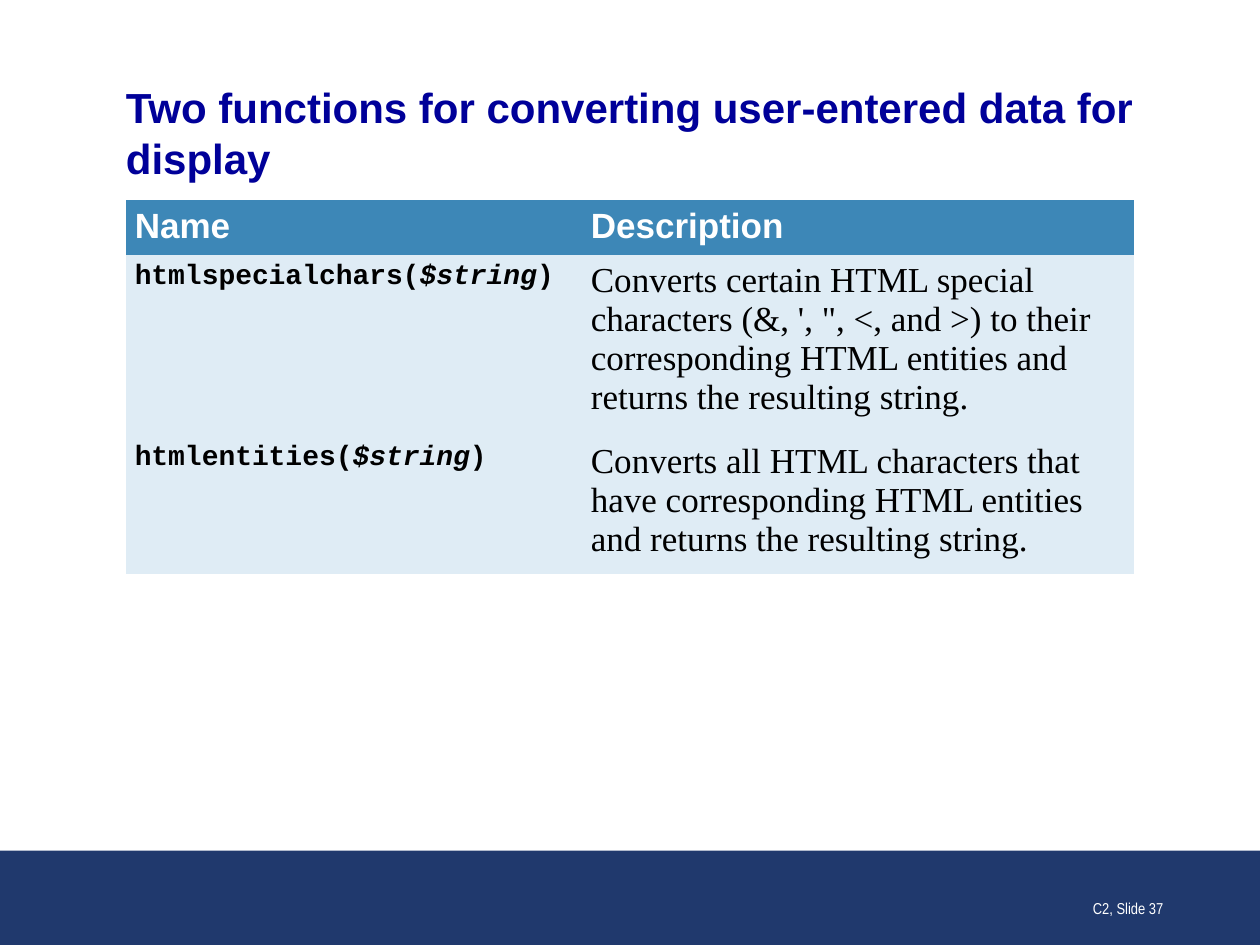
"""Build the slide on two functions that convert user-entered data for display."""
from dataclasses import dataclass

from pptx import Presentation
from pptx.dml.color import RGBColor
from pptx.enum.shapes import MSO_SHAPE
from pptx.enum.text import MSO_ANCHOR, PP_ALIGN
from pptx.oxml.ns import qn
from pptx.util import Inches, Pt

TITLE = "Two functions for converting user-entered data for display"
HEADINGS = ("Name", "Description")
FUNCTIONS = [
    ("htmlspecialchars", "$string",
     "Converts certain HTML special characters (&, ', \", <, and >) to their "
     "corresponding HTML entities and returns the resulting string."),
    ("htmlentities", "$string",
     "Converts all HTML characters that have corresponding HTML entities "
     "and returns the resulting string."),
]
FOOTER = "C2, Slide 37"
COLUMN_WIDTHS = (3.62, 4.38)
ROW_HEIGHTS = (0.4, 1.34, 1.02)
NO_GRID_STYLE = "{2D5ABB26-0587-4C30-8999-92F81FD0307C}"


@dataclass(frozen=True)
class TextStyle:
    font: str
    size: int
    color: str
    bold: bool = False


@dataclass(frozen=True)
class Theme:
    title: TextStyle = TextStyle("Arial", 24, "000099", True)
    heading: TextStyle = TextStyle("Arial", 20, "FFFFFF", True)
    code: TextStyle = TextStyle("Courier New", 16, "000000", True)
    description: TextStyle = TextStyle("Times New Roman", 20, "000000")
    footer: TextStyle = TextStyle("Arial Narrow", 9, "FFFFFF")
    band: str = "20396D"
    heading_fill: str = "3D87B7"
    body_fill: str = "DFECF5"


THEME = Theme()


def paint(target, color):
    target.fill.solid()
    target.fill.fore_color.rgb = RGBColor.from_string(color)


def write(paragraph, pieces, style):
    for wording, italic in pieces:
        run = paragraph.add_run()
        run.text = wording
        run.font.name = style.font
        run.font.size = Pt(style.size)
        run.font.bold = style.bold
        run.font.italic = italic
        run.font.color.rgb = RGBColor.from_string(style.color)


def add_label(slide, box, wording, style, anchor, inset=None):
    frame = slide.shapes.add_textbox(*map(Inches, box)).text_frame
    frame.word_wrap = True
    frame.vertical_anchor = anchor
    if inset is not None:
        frame.margin_left = frame.margin_right = Inches(inset)
        frame.margin_top = frame.margin_bottom = Inches(inset)
    write(frame.paragraphs[0], [(wording, False)], style)
    return frame.paragraphs[0]


def fill_cell(cell, pieces, style, color):
    cell.margin_left = cell.margin_right = Inches(0.07)
    cell.margin_top = cell.margin_bottom = Inches(0.05)
    paint(cell, color)
    write(cell.text_frame.paragraphs[0], pieces, style)


def add_function_table(slide):
    frame = slide.shapes.add_table(
        len(ROW_HEIGHTS), len(COLUMN_WIDTHS), Inches(1), Inches(1.59),
        Inches(sum(COLUMN_WIDTHS)), Inches(sum(ROW_HEIGHTS)))
    for style_id in frame.element.iter(qn("a:tableStyleId")):
        style_id.text = NO_GRID_STYLE
    table = frame.table
    table.horz_banding = False
    for column, width in zip(table.columns, COLUMN_WIDTHS):
        column.width = Inches(width)
    for row, height in zip(table.rows, ROW_HEIGHTS):
        row.height = Inches(height)

    for column, heading in enumerate(HEADINGS):
        fill_cell(table.cell(0, column), [(heading, False)],
                  THEME.heading, THEME.heading_fill)
    for row, (name, argument, description) in enumerate(FUNCTIONS, start=1):
        signature = [(name + "(", False), (argument, True), (")", False)]
        fill_cell(table.cell(row, 0), signature, THEME.code, THEME.body_fill)
        fill_cell(table.cell(row, 1), [(description, False)],
                  THEME.description, THEME.body_fill)


def main():
    deck = Presentation()
    deck.slide_width, deck.slide_height = Inches(10), Inches(7.5)
    slide = deck.slides.add_slide(deck.slide_layouts[6])

    band = slide.shapes.add_shape(
        MSO_SHAPE.RECTANGLE, 0, Inches(6.75), deck.slide_width, Inches(0.75))
    band.shadow.inherit = False
    band.line.fill.background()
    paint(band, THEME.band)

    add_label(slide, (1, 0.62, 8, 0.86), TITLE, THEME.title,
              MSO_ANCHOR.MIDDLE, inset=0)
    add_function_table(slide)
    footer = add_label(slide, (7.25, 6.83, 2.08, 0.5), FOOTER, THEME.footer,
                       MSO_ANCHOR.BOTTOM)
    footer.alignment = PP_ALIGN.RIGHT
    deck.save("out.pptx")


if __name__ == "__main__":
    main()
